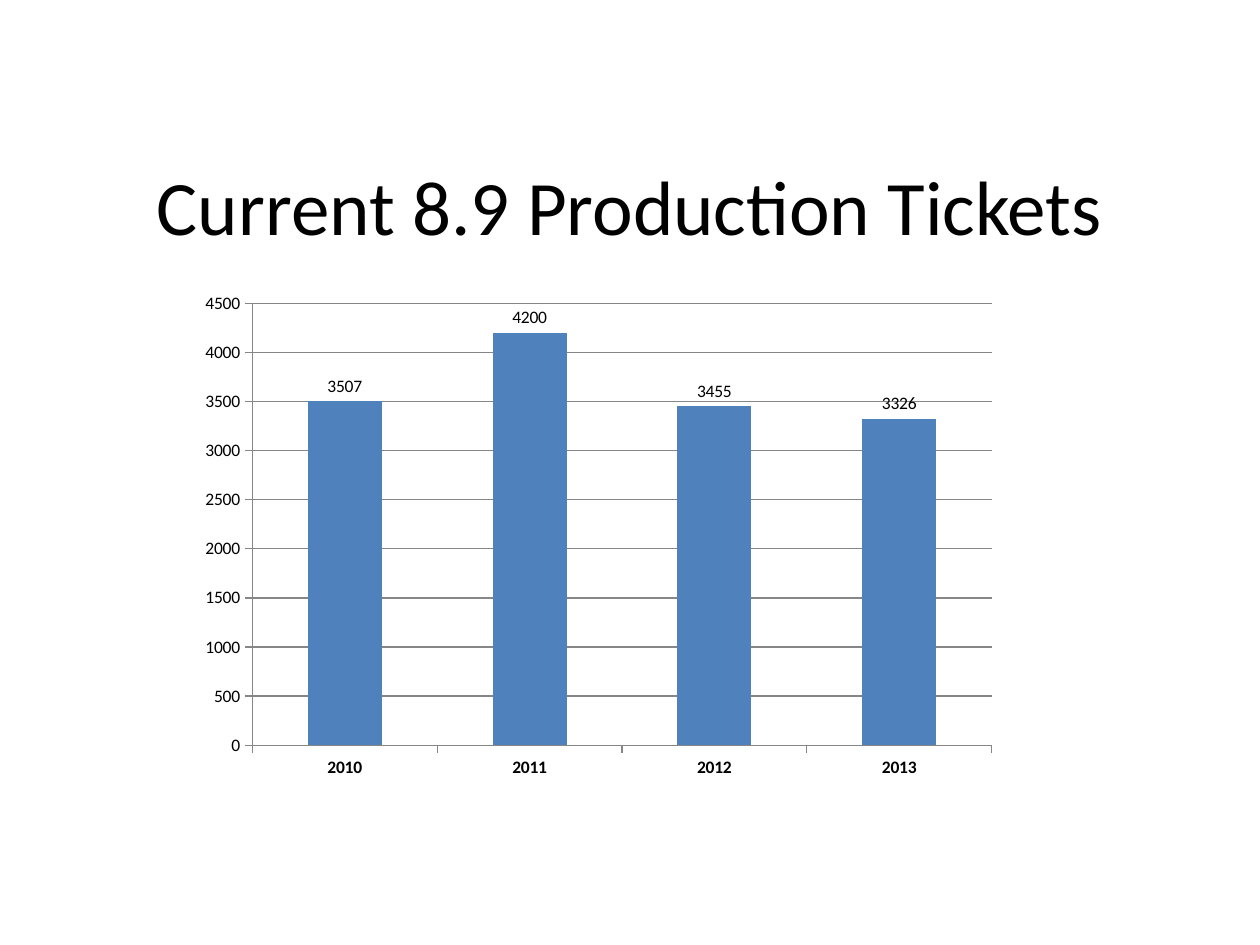
import pptx
import pptx.util
import pptx.chart.data
import pptx.dml.color
import pptx.enum.chart
import pptx.enum.text

WIDE, HIGH = 10, 7.5
FACE = "Calibri"
YEARS = ["2010", "2011", "2012", "2013"]
COUNTS = [3507, 4200, 3455, 3326]


def tint(code):
    return pptx.dml.color.RGBColor.from_string(code)


def area(left, top, width, height):
    """Turn shares of the slide's size into lengths."""
    shares = (left * WIDE, top * HIGH, width * WIDE, height * HIGH)
    return [pptx.util.Inches(round(share, 2)) for share in shares]


def style(font, size, bold=False):
    font.name = FACE
    font.size = pptx.util.Pt(size)
    font.bold = bold
    font.color.rgb = tint("000000")


def rule(line):
    line.color.rgb = tint("868686")
    line.width = pptx.util.Pt(0.75)


def head(slide, text, box):
    title = slide.shapes.title
    title.left, title.top, title.width, title.height = box
    frame = title.text_frame
    frame.text = text
    frame.vertical_anchor = pptx.enum.text.MSO_ANCHOR.MIDDLE
    line = frame.paragraphs[0]
    line.alignment = pptx.enum.text.PP_ALIGN.CENTER
    style(line.runs[0].font, 44)


def bars(slide, box):
    data = pptx.chart.data.CategoryChartData()
    data.categories = YEARS
    data.add_series("Series 1", COUNTS)
    kind = pptx.enum.chart.XL_CHART_TYPE.COLUMN_CLUSTERED
    chart = slide.shapes.add_chart(kind, *box, data).chart
    chart.has_legend = False
    chart.has_title = False
    style(chart.font, 10)

    plot = chart.plots[0]
    plot.gap_width = 150
    plot.vary_by_categories = False
    fill = plot.series[0].format.fill
    fill.solid()
    fill.fore_color.rgb = tint("4F81BD")
    plot.has_data_labels = True
    labels = plot.data_labels
    labels.show_value = True
    labels.position = pptx.enum.chart.XL_LABEL_POSITION.OUTSIDE_END
    style(labels.font, 10)

    for axis, bold in ((chart.category_axis, True), (chart.value_axis, False)):
        axis.major_tick_mark = pptx.enum.chart.XL_TICK_MARK.OUTSIDE
        style(axis.tick_labels.font, 10, bold)
        rule(axis.format.line)
    scale = chart.value_axis
    scale.minimum_scale, scale.maximum_scale = 0, 4500
    scale.major_unit = 500
    scale.has_major_gridlines = True
    rule(scale.major_gridlines.format.line)


def main():
    deck = pptx.Presentation()
    deck.slide_width = pptx.util.Inches(WIDE)
    deck.slide_height = pptx.util.Inches(HIGH)
    slide = deck.slides.add_slide(deck.slide_layouts[5])
    head(slide, "Current 8.9 Production Tickets", area(0.05, 2 / 15, 0.9, 1 / 6))
    bars(slide, area(0.15, 0.3, 0.65, 8 / 15))
    deck.save("out.pptx")


if __name__ == "__main__":
    main()
